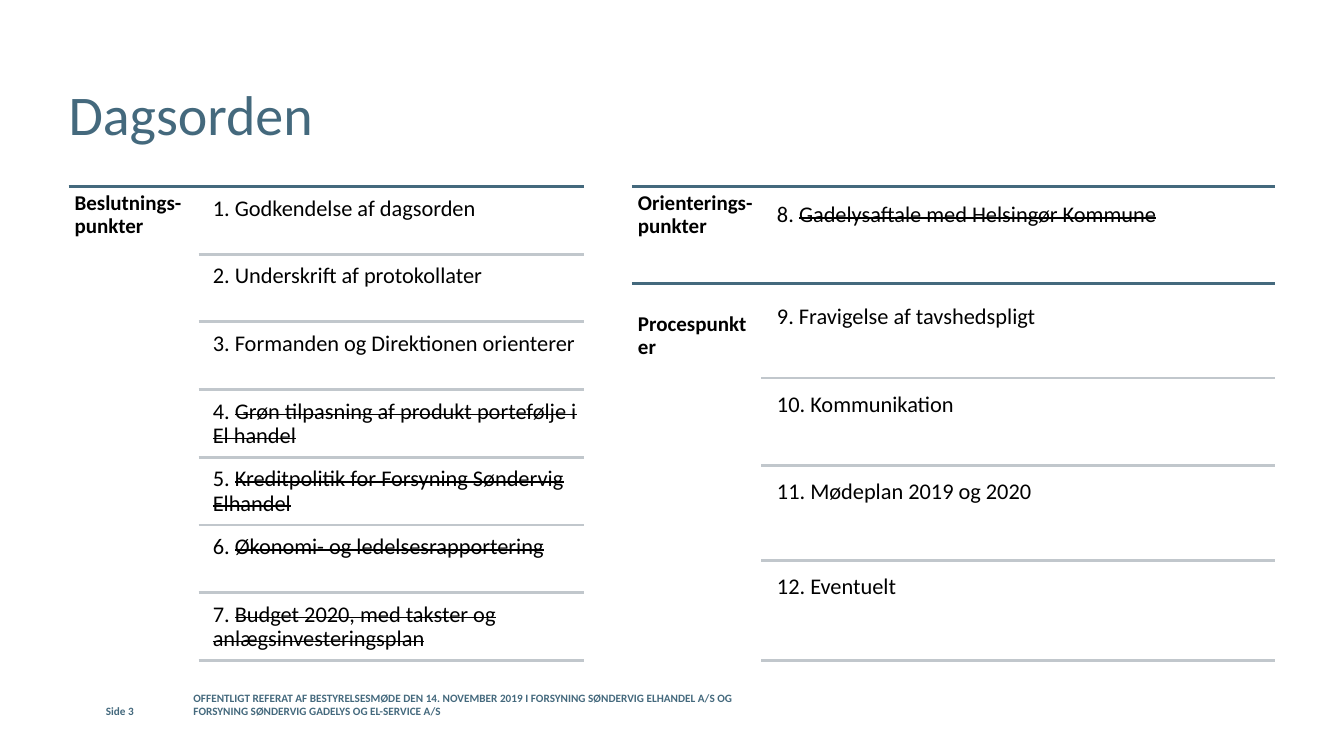
import pptx
import pptx.dml.color
import pptx.enum.shapes
import pptx.enum.text
import pptx.oxml.ns
import pptx.util
from lxml import etree

Pt = pptx.util.Pt
RGBColor = pptx.dml.color.RGBColor
Anchor = pptx.enum.text.MSO_ANCHOR

TEAL = RGBColor(0x44, 0x69, 0x7D)
GREY = RGBColor(0xC1, 0xC7, 0xCC)
BLACK = RGBColor(0, 0, 0)

TITLE = "Dagsorden"
DECISIONS = [
    ("1. Godkendelse af dagsorden", ""),
    ("2. Underskrift af protokollater", ""),
    ("3. Formanden og Direktionen orienterer", ""),
    ("4. ", "Grøn tilpasning af produkt portefølje i El handel"),
    ("5. ", "Kreditpolitik for Forsyning Søndervig Elhandel"),
    ("6. ", "Økonomi- og ledelsesrapportering"),
    ("7. ", "Budget 2020, med takster og anlægsinvesteringsplan"),
]
BRIEFING = ("8. ", "Gadelysaftale med Helsingør Kommune")
PROCESS = [
    ("9. Fravigelse af tavshedspligt", 270),
    ("10. Kommunikation", 332.6),
    ("11. Mødeplan 2019 og 2020", 400.6),
    ("12. Eventuelt", 472),
]
HEADINGS = [
    ("Beslutnings-punkter", 49, 133.2, 92.9, 341.3),
    ("Orienterings-punkter", 451.4, 133.2, 92.2, 170.6),
    ("Procespunkter", 451.4, 219.6, 92.2, 170.6),
]
FOOTERS = [
    ("OFFENTLIGT REFERAT AF BESTYRELSESMØDE DEN 14. NOVEMBER 2019 I "
     "FORSYNING SØNDERVIG ELHANDEL A/S OG FORSYNING SØNDERVIG GADELYS OG "
     "EL-SERVICE A/S", 138.2, 408.2),
    ("Side 3", 75.6, 49),
]

TOP = 133.2
ROW = 48.36
LEFT_START, LEFT_ITEM, LEFT_END = 49, 141.8, 417.4
RIGHT_START, RIGHT_ITEM, RIGHT_END = 451.4, 543.6, 910.8
SECTION_RULE = 202.5
PROCESS_TOP = 207.5
RULE_GAP = 5.6

presentation = pptx.Presentation()
presentation.slide_width = Pt(960)
presentation.slide_height = Pt(540)
slide = presentation.slides.add_slide(presentation.slide_layouts[6])


def add_text(runs, left, top, width, height, size, color=BLACK, bold=False,
             inset=0, anchor=Anchor.TOP, spacing=1.0):
    shape = slide.shapes.add_textbox(Pt(left), Pt(top), Pt(width), Pt(height))
    frame = shape.text_frame
    frame_format = {"word_wrap": True, "vertical_anchor": anchor}
    for side in ("left", "top", "right", "bottom"):
        frame_format["margin_" + side] = Pt(inset)
    for name, value in frame_format.items():
        setattr(frame, name, value)
    paragraph = frame.paragraphs[0]
    paragraph.line_spacing = spacing
    for text, struck in runs:
        run = paragraph.add_run()
        run.text = text
        for name, value in {"name": "Calibri", "size": Pt(size), "bold": bold}.items():
            setattr(run.font, name, value)
        run.font.color.rgb = color
        if struck:
            run.font._element.set("strike", "sngStrike")


def add_rule(start, end, y, color):
    connector = slide.shapes.add_connector(
        pptx.enum.shapes.MSO_CONNECTOR.STRAIGHT, Pt(start), Pt(y), Pt(end), Pt(y))
    connector.line.color.rgb = color
    connector.line.width = Pt(2)
    etree.SubElement(connector._element.spPr, pptx.oxml.ns.qn("a:effectLst"))


def add_item(label, struck, left, top, width, height):
    runs = [(label, False)] + ([(struck, True)] if struck else [])
    add_text(runs, left, top, width, height, 16, inset=5, spacing=0.9)


add_text([(TITLE, False)], LEFT_START, 28.8, 828, 104.4, 40, TEAL, anchor=Anchor.MIDDLE)

for heading, left, top, width, height in HEADINGS:
    add_text([(heading, False)], left, top, width, height, 15, bold=True,
             inset=4.3, spacing=0.9)

add_rule(LEFT_START, LEFT_END, TOP, TEAL)
for index, (label, struck) in enumerate(DECISIONS):
    row_top = TOP + index * ROW
    add_item(label, struck, 147, row_top + 2.4, 270, 46)
    add_rule(LEFT_ITEM, LEFT_END, row_top + ROW, GREY)

for y in (TOP, SECTION_RULE):
    add_rule(RIGHT_START, RIGHT_END, y, TEAL)
add_item(*BRIEFING, 550, 140.4, 360.7, 154.8)

row_top = PROCESS_TOP
for label, rule in PROCESS:
    add_item(label, "", 550, row_top + RULE_GAP, 360.7, 40.3)
    add_rule(RIGHT_ITEM, RIGHT_END, rule, GREY)
    row_top = rule

for footer, left, width in FOOTERS:
    add_text([(footer, False)], left, 499, width, 13.7, 8, TEAL, True,
             anchor=Anchor.BOTTOM)

presentation.save("out.pptx")
